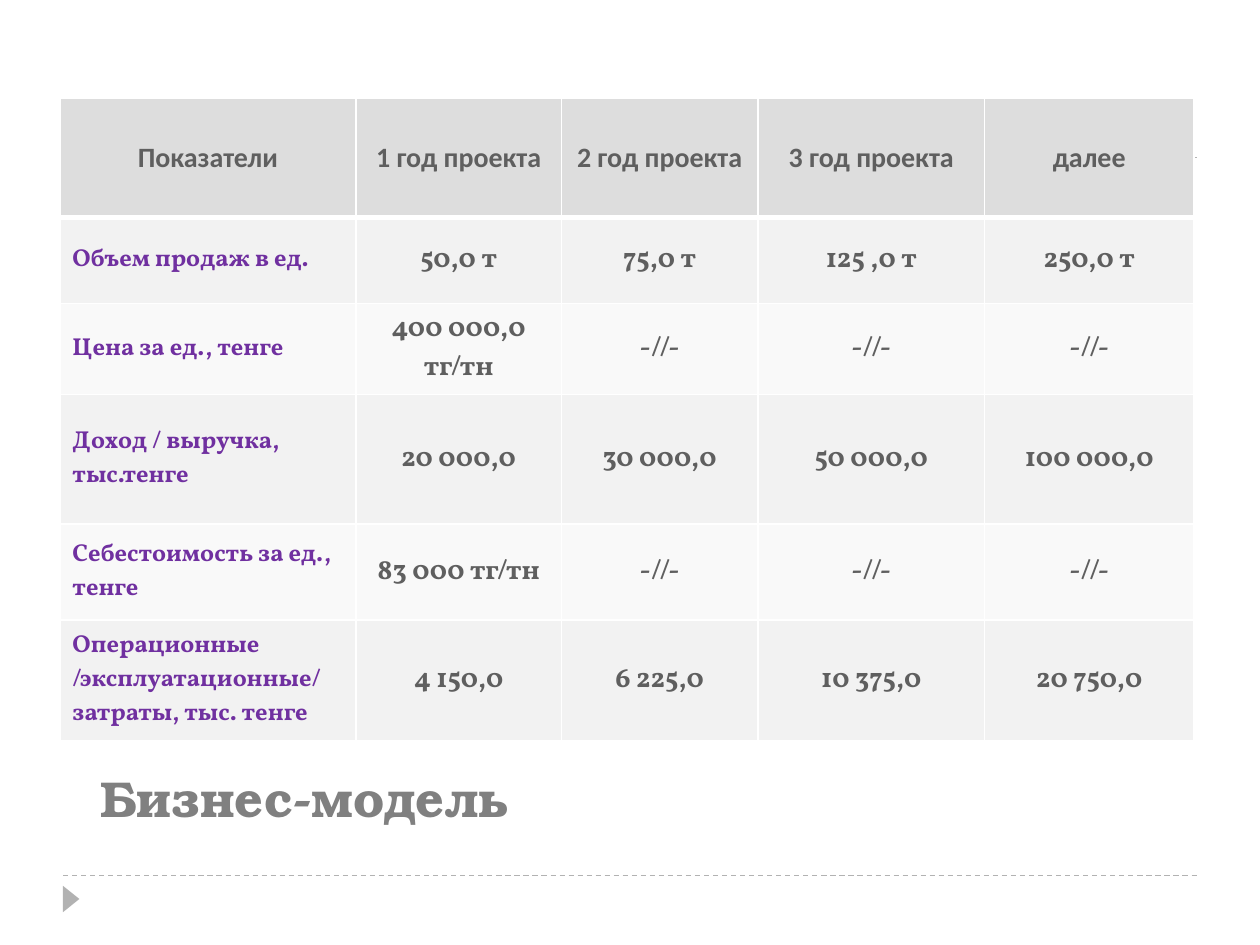
"""Build the business model slide with its table of yearly figures."""
from dataclasses import dataclass
from lxml import etree
from pptx import Presentation
from pptx.dml.color import RGBColor
from pptx.enum.dml import MSO_LINE
from pptx.enum.shapes import MSO_CONNECTOR, MSO_SHAPE
from pptx.enum.text import MSO_ANCHOR, MSO_AUTO_SIZE, PP_ALIGN
from pptx.oxml.ns import qn
from pptx.util import Pt

STRAIGHT = MSO_CONNECTOR.STRAIGHT
TRIANGLE = MSO_SHAPE.ISOSCELES_TRIANGLE
DASH = MSO_LINE.DASH
LEFT, CENTER = PP_ALIGN.LEFT, PP_ALIGN.CENTER
MIDDLE, BOTTOM = MSO_ANCHOR.MIDDLE, MSO_ANCHOR.BOTTOM
NO_FIT = MSO_AUTO_SIZE.NONE


@dataclass(frozen=True)
class Theme:
    """Colours, fonts and type sizes."""
    white: str = "FFFFFF"
    rule: str = "B2B2B2"
    title: str = "808080"
    text: str = "5F5F5F"
    label: str = "7030A0"
    head: str = "DDDDDD"
    odd: str = "F2F2F2"
    even: str = "F9F9F9"
    title_font: str = "TeX Gyre Bonum"
    head_font: str = "Calibri"
    body_font: str = "Vollkorn"
    title_size: float = 28.8
    value_size: float = 16
    label_size: float = 14


@dataclass(frozen=True)
class Row:
    """One table row: its height, label and yearly values."""
    height: float
    label: str
    values: tuple[str, ...]


THEME = Theme()
SAME = ("-//-",) * 3
WIDTHS = (169.2, 117.4, 112.3, 129.6, 119.5)
ROWS = (
    Row(68, "Показатели", ("1 год проекта", "2 год проекта", "3 год проекта", "далее")),
    Row(49, "Объем продаж в ед.", ("50,0 т", "75,0 т", "125 ,0 т", "250,0 т")),
    Row(52, "Цена за ед., тенге", ("400 000,0 тг/тн", *SAME)),
    Row(74, "Доход / выручка, тыс.тенге", ("20 000,0", "30 000,0", "50 000,0", "100 000,0")),
    Row(55, "Себестоимость за ед., тенге", ("83 000 тг/тн", *SAME)),
    Row(69, "Операционные /эксплуатационные/ затраты, тыс. тенге",
        ("4 150,0", "6 225,0", "10 375,0", "20 750,0")),
)


def color(code: str) -> RGBColor:
    """Turn a hex code into a colour."""
    return RGBColor.from_string(code)


def write(frame, text: str, *, font: str, size: float, ink: str, align=LEFT) -> None:
    """Put bold text into a frame."""
    para = frame.paragraphs[0]
    para.alignment = align
    run = para.add_run()
    run.text = text
    run.font.name, run.font.size, run.font.bold = font, Pt(size), True
    run.font.color.rgb = color(ink)


def draw_title(slide, text: str) -> None:
    """Place and format the title."""
    title = slide.shapes.title
    title.left, title.top, title.width, title.height = Pt(50.4), Pt(444.2), Pt(644.4), Pt(32.4)
    frame = title.text_frame
    frame.auto_size, frame.word_wrap, frame.vertical_anchor = NO_FIT, True, BOTTOM
    write(frame, text, font=THEME.title_font, size=THEME.title_size, ink=THEME.title)


def draw_rule(slide, top: float) -> None:
    """Draw a dashed line across the slide."""
    rule = slide.shapes.add_connector(STRAIGHT, Pt(36), Pt(top), Pt(684), Pt(top))
    rule.line.color.rgb = color(THEME.rule)
    rule.line.width, rule.line.dash_style = Pt(0.75), DASH
    etree.SubElement(rule._element.spPr, qn("a:effectLst"))


def draw_mark(slide) -> None:
    """Draw the triangle that points right."""
    mark = slide.shapes.add_shape(TRIANGLE, Pt(33.1), Pt(509), Pt(15.1), Pt(9.4))
    mark.rotation = 90
    mark.shadow.inherit = False
    mark.fill.solid()
    mark.fill.fore_color.rgb = color(THEME.rule)
    mark.line.fill.background()


def edge(cell, side: str, width: float) -> None:
    """Give one side of a cell a white border."""
    line = etree.SubElement(cell._tc.get_or_add_tcPr(), qn(f"a:ln{side}"), w=str(Pt(width)))
    fill = etree.SubElement(line, qn("a:solidFill"))
    etree.SubElement(fill, qn("a:srgbClr"), val=THEME.white)


def draw_cell(cell, text: str, row: int, col: int) -> None:
    """Format and fill one table cell."""
    head, label = row == 0, row > 0 and col == 0
    for side in "LRTB":
        thick = (head and side == "B") or (row == 1 and side == "T")
        edge(cell, side, 3 if thick else 1)
    cell.fill.solid()
    band = THEME.odd if row % 2 else THEME.even
    cell.fill.fore_color.rgb = color(THEME.head if head else band)
    cell.vertical_anchor = MIDDLE
    write(cell.text_frame, text,
          font=THEME.head_font if head else THEME.body_font,
          size=THEME.label_size if label else THEME.value_size,
          ink=THEME.label if label else THEME.text,
          align=LEFT if label else CENTER)


def draw_table(slide, rows: tuple[Row, ...], widths: tuple[float, ...]) -> None:
    """Draw the table of figures."""
    height = sum(row.height for row in rows)
    table = slide.shapes.add_table(len(rows), len(widths), Pt(34.2), Pt(56.4),
                                   Pt(sum(widths)), Pt(height)).table
    for col, width in enumerate(widths):
        table.columns[col].width = Pt(width)
    for num, row in enumerate(rows):
        table.rows[num].height = Pt(row.height)
        for col, text in enumerate((row.label, *row.values)):
            draw_cell(table.cell(num, col), text, num, col)


def main() -> None:
    """Build and save the slide."""
    deck = Presentation()
    deck.slide_width, deck.slide_height = Pt(720), Pt(540)
    slide = deck.slides.add_slide(deck.slide_layouts[5])
    for top in (500.4, 90):
        draw_rule(slide, top)
    draw_mark(slide)
    draw_title(slide, "Бизнес-модель")
    draw_table(slide, ROWS, WIDTHS)
    deck.save("out.pptx")


if __name__ == "__main__":
    main()
